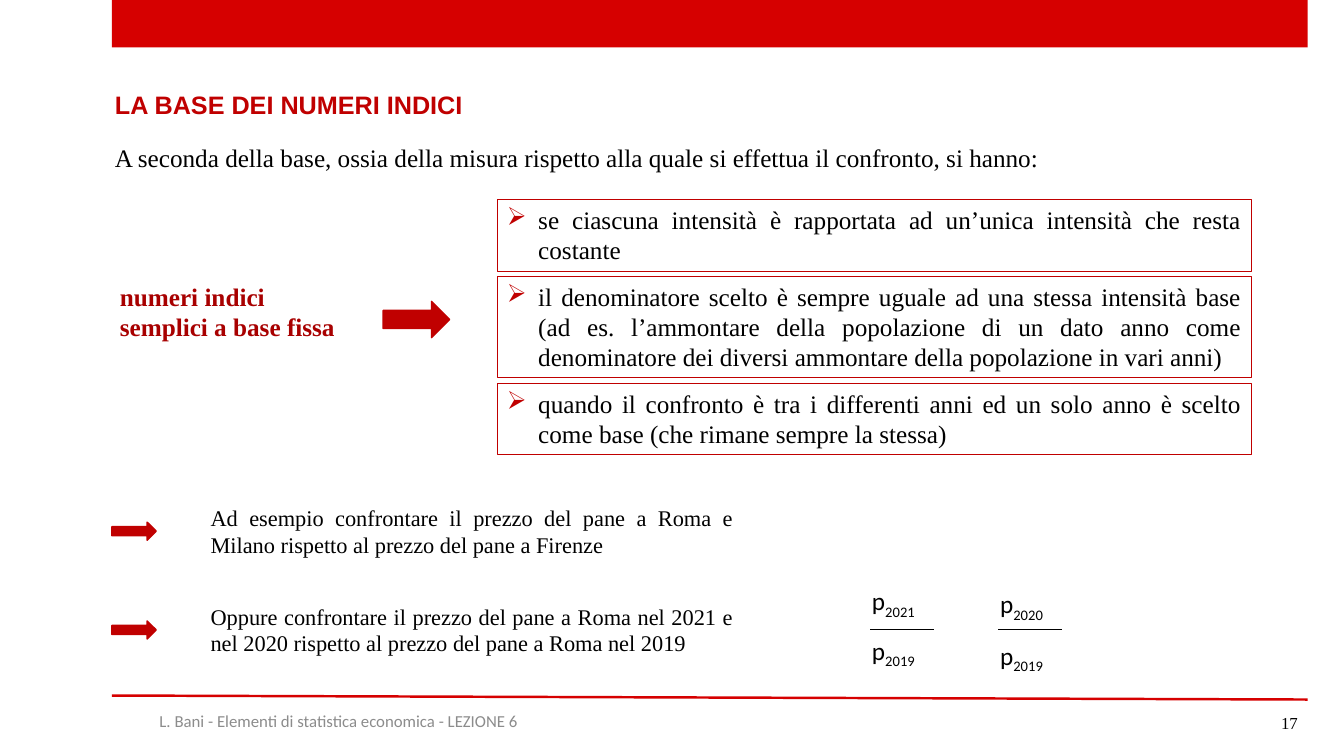
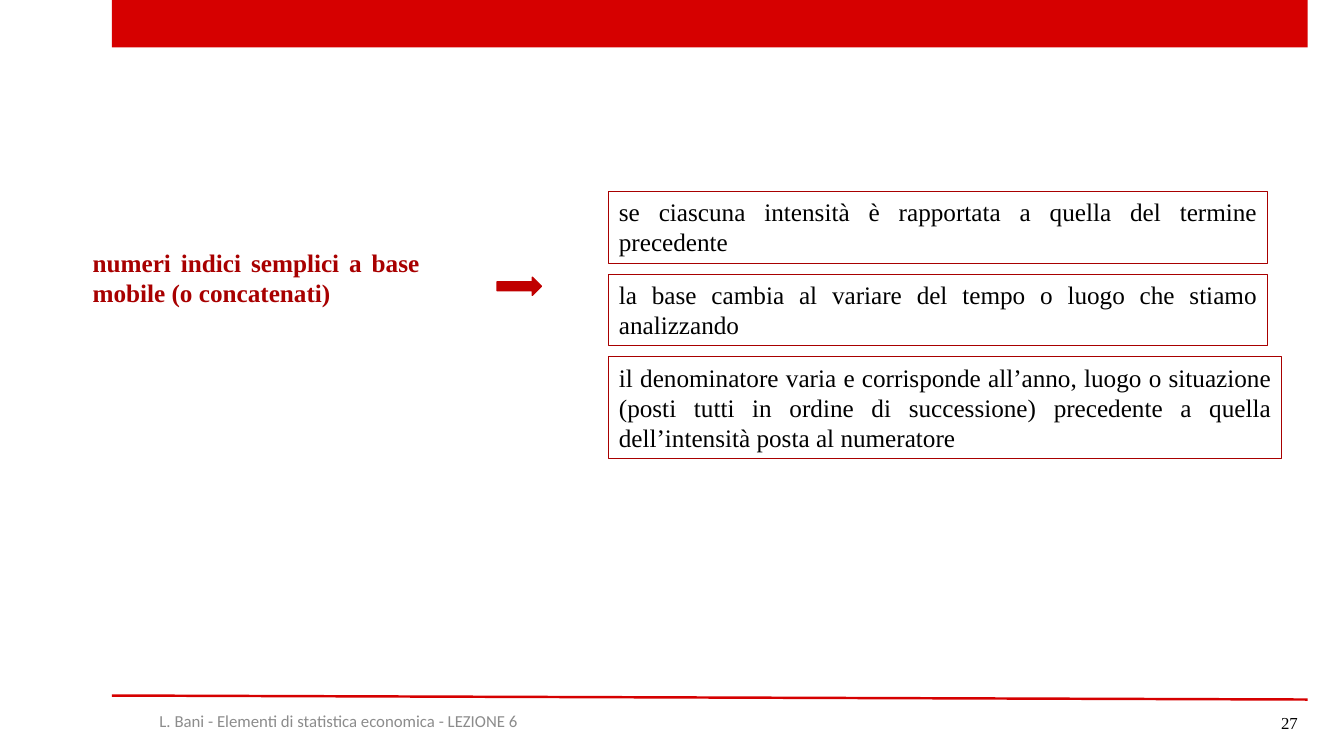
from dataclasses import dataclass
from typing import NamedTuple

from lxml import etree
from pptx import Presentation
from pptx.dml.color import RGBColor
from pptx.enum.shapes import MSO_CONNECTOR, MSO_SHAPE
from pptx.enum.text import MSO_ANCHOR, MSO_AUTO_SIZE, PP_ALIGN
from pptx.oxml.ns import qn
from pptx.util import Emu, Pt

RECTANGLE, RIGHT_ARROW = MSO_SHAPE.RECTANGLE, MSO_SHAPE.RIGHT_ARROW
STRAIGHT = MSO_CONNECTOR.STRAIGHT
TOP, MIDDLE = MSO_ANCHOR.TOP, MSO_ANCHOR.MIDDLE
LEFT, CENTER, RIGHT, JUSTIFY = (
    PP_ALIGN.LEFT, PP_ALIGN.CENTER, PP_ALIGN.RIGHT, PP_ALIGN.JUSTIFY)
NO_AUTOFIT = MSO_AUTO_SIZE.NONE
EMU_PER_PX = 9144
SLIDE_WIDTH, SLIDE_HEIGHT = 1333, 750
TITLE_ONLY, BLANK = 5, 6


class Box(NamedTuple):
    """A rectangle in px."""
    left: int
    top: int
    width: int
    height: int


class Statement(NamedTuple):
    """A framed sentence with its line count and frame width in px."""
    text: str
    lines: int
    width: int


@dataclass(frozen=True)
class TextStyle:
    """Font, size, colour and weight of a text."""
    font: str
    size: int
    color: str
    bold: bool = False


@dataclass(frozen=True)
class Theme:
    """Colours and text styles shared by all slides."""
    band: str = "D60000"
    accent: str = "C00000"
    dark_accent: str = "A80000"
    black: str = "000000"
    title: TextStyle = TextStyle("Arial", 18, "C00000", True)
    body: TextStyle = TextStyle("Times New Roman", 18, "000000")
    label: TextStyle = TextStyle("Times New Roman", 18, "A80000", True)
    example: TextStyle = TextStyle("Times New Roman", 16, "000000")
    formula: TextStyle = TextStyle("Calibri", 18, "000000")
    footer: TextStyle = TextStyle("Calibri", 12, "8C8C8C")
    number: TextStyle = TextStyle("Times New Roman", 12, "000000")


THEME = Theme()
FOOTER = "L. Bani - Elementi di statistica economica - LEZIONE 6"


def px(*lengths):
    """Turn px lengths into EMU."""
    return [Emu(length * EMU_PER_PX) for length in lengths]


def rgb(color):
    """Return the colour object for a hex string."""
    return RGBColor.from_string(color)


def style_text(paragraph, style, alignment):
    """Format a whole paragraph."""
    paragraph.alignment = alignment
    font = paragraph.font
    font.name, font.size, font.bold = style.font, Pt(style.size), style.bold
    font.color.rgb = rgb(style.color)


def set_line(shape, color, width):
    """Give a shape or connector a solid line."""
    shape.line.color.rgb = rgb(color)
    shape.line.width = Pt(width)


def add_text(shapes, box, text, style, alignment=LEFT, anchor=TOP):
    """Add a wrapping text box and return it."""
    shape = shapes.add_textbox(*px(*box))
    frame = shape.text_frame
    frame.word_wrap, frame.vertical_anchor = True, anchor
    paragraph = frame.paragraphs[0]
    paragraph.text = text
    style_text(paragraph, style, alignment)
    return shape


def add_bullet(paragraph):
    """Hang a paragraph from an arrowhead bullet."""
    properties = paragraph._p.get_or_add_pPr()
    indent, = px(31)
    properties.set("marL", str(indent))
    properties.set("indent", str(-indent))
    color = etree.SubElement(properties, qn("a:buClr"))
    etree.SubElement(color, qn("a:srgbClr"), val=THEME.accent)
    etree.SubElement(properties, qn("a:buChar"), char="➢")


def add_block(shapes, preset, box, color):
    """Add a solid preset shape without outline or shadow."""
    shape = shapes.add_shape(preset, *px(*box))
    shape.shadow.inherit = False
    shape.fill.solid()
    shape.fill.fore_color.rgb = rgb(color)
    shape.line.fill.background()
    return shape


def add_arrow(slide, box):
    """Add a red arrow pointing right."""
    arrow = add_block(slide.shapes, RIGHT_ARROW, box, THEME.accent)
    set_line(arrow, THEME.accent, 1)


def add_rule(shapes, start, end, color, width):
    """Add a straight line between two points."""
    rule = shapes.add_connector(STRAIGHT, *px(*start, *end))
    set_line(rule, color, width)
    etree.SubElement(rule._element.spPr, qn("a:effectLst"))
    return rule


def decorate_master(presentation, slide):
    """Put the top band and the bottom rule on the slide master."""
    band = add_block(slide.shapes, RECTANGLE, Box(111, 0, 1186, 47), THEME.band)
    rule = add_rule(slide.shapes, (111, 690), (1297, 694), THEME.band, 1.75)
    tree = presentation.slide_master.shapes._spTree
    for offset, shape in enumerate((band, rule)):
        shape._element.xpath(".//p:cNvPr")[0].set("id", str(100 + offset))
        tree.insert(2 + offset, shape._element)


def add_footer(slide, number):
    """Add the course line and the slide number."""
    add_text(slide.shapes, Box(111, 695, 450, 40), FOOTER, THEME.footer, CENTER, MIDDLE)
    add_text(slide.shapes, Box(997, 697, 300, 40), number, THEME.number, RIGHT, MIDDLE)


def set_title(slide, box, text):
    """Move, fill and format the title placeholder."""
    title = slide.shapes.title
    title.left, title.top, title.width, title.height = px(*box)
    frame = title.text_frame
    frame.text = text
    frame.word_wrap, frame.auto_size, frame.vertical_anchor = False, NO_AUTOFIT, TOP
    style_text(frame.paragraphs[0], THEME.title, LEFT)


def add_statements(slide, left, top, gap, color, statements, bulleted=False):
    """Stack framed statements downwards from a corner."""
    for statement in statements:
        height = 30 * statement.lines + 11
        box = Box(left, top, statement.width, height)
        shape = add_text(slide.shapes, box, "", THEME.body, JUSTIFY)
        paragraph = shape.text_frame.paragraphs[0]
        paragraph.text = statement.text
        if bulleted:
            paragraph._p.remove(paragraph._p.pPr)
            add_bullet(paragraph)
            style_text(paragraph, THEME.body, JUSTIFY)
        set_line(shape, color, 0.75)
        top += height + gap


def add_example(slide, box, text):
    """Add a small arrow followed by an example."""
    add_arrow(slide, Box(box.left, box.top + 23, 44, 18))
    text_box = Box(box.left + 88, box.top, box.width - 88, box.height)
    add_text(slide.shapes, text_box, text, THEME.example, JUSTIFY)


def add_fraction(slide, box, numerator, denominator):
    """Add a grouped price ratio whose bar lies 8 px inside the box."""
    shapes = slide.shapes.add_group_shape().shapes
    bar_left, bar_top = box.left + 8, 624
    add_rule(shapes, (bar_left, bar_top), (bar_left + 63, bar_top), THEME.black, 0.5)
    tops = (box.top, box.top + box.height - 40)
    for year, top in zip((numerator, denominator), tops):
        term = add_text(shapes, Box(box.left, top, box.width, 40), "p", THEME.formula)
        subscript = term.text_frame.paragraphs[0].add_run()
        subscript.text = year
        subscript.font._element.set("baseline", "-25000")


def build_fixed_base(slide):
    """Build the slide on fixed-base index numbers."""
    set_title(slide, Box(104, 84, 375, 40), "LA BASE DEI NUMERI INDICI")
    add_text(slide.shapes, Box(104, 136, 1058, 40),
             "A seconda della base, ossia della misura rispetto alla quale "
             "si effettua il confronto, si hanno:", THEME.body)
    add_text(slide.shapes, Box(109, 274, 248, 71),
             "numeri indici semplici a base fissa", THEME.label)
    add_arrow(slide, Box(380, 299, 66, 36))
    add_statements(slide, 493, 198, 5, THEME.accent, [
        Statement("se ciascuna intensità è rapportata ad un’unica intensità "
                  "che resta costante", 2, 748),
        Statement("il denominatore scelto è sempre uguale ad una stessa intensità "
                  "base (ad es. l’ammontare della popolazione di un dato anno come "
                  "denominatore dei diversi ammontare della popolazione in vari anni)",
                  3, 748),
        Statement("quando il confronto è tra i differenti anni ed un solo anno è "
                  "scelto come base (che rimane sempre la stessa)", 2, 748),
    ], bulleted=True)
    examples = (
        "Ad esempio confrontare il prezzo del pane a Roma e Milano rispetto "
        "al prezzo del pane a Firenze",
        "Oppure confrontare il prezzo del pane a Roma nel 2021 e nel 2020 "
        "rispetto al prezzo del pane a Roma nel 2019",
    )
    for row, text in enumerate(examples):
        add_example(slide, Box(111, 495 + 98 * row, 626, 64), text)
    add_fraction(slide, Box(855, 576, 99, 89), "2021", "2019")
    add_fraction(slide, Box(982, 579, 99, 91), "2020", "2019")


def build_moving_base(slide):
    """Build the slide on moving-base index numbers."""
    add_text(slide.shapes, Box(82, 240, 344, 71),
             "numeri indici semplici a base mobile (o concatenati)",
             THEME.label, JUSTIFY)
    add_arrow(slide, Box(493, 275, 44, 18))
    add_statements(slide, 604, 190, 11, THEME.dark_accent, [
        Statement("se ciascuna intensità è rapportata a quella del termine "
                  "precedente", 2, 653),
        Statement("la base cambia al variare del tempo o luogo che stiamo "
                  "analizzando", 2, 653),
        Statement("il denominatore varia e corrisponde all’anno, luogo o situazione "
                  "(posti tutti in ordine di successione) precedente a quella "
                  "dell’intensità posta al numeratore", 3, 667),
    ])


def main():
    """Build and save the presentation."""
    presentation = Presentation()
    presentation.slide_width, presentation.slide_height = px(SLIDE_WIDTH, SLIDE_HEIGHT)
    pages = ((TITLE_ONLY, build_fixed_base, "17"), (BLANK, build_moving_base, "27"))
    for layout, build, number in pages:
        slide = presentation.slides.add_slide(presentation.slide_layouts[layout])
        build(slide)
        add_footer(slide, number)
    decorate_master(presentation, presentation.slides[0])
    presentation.save("out.pptx")


if __name__ == "__main__":
    main()
